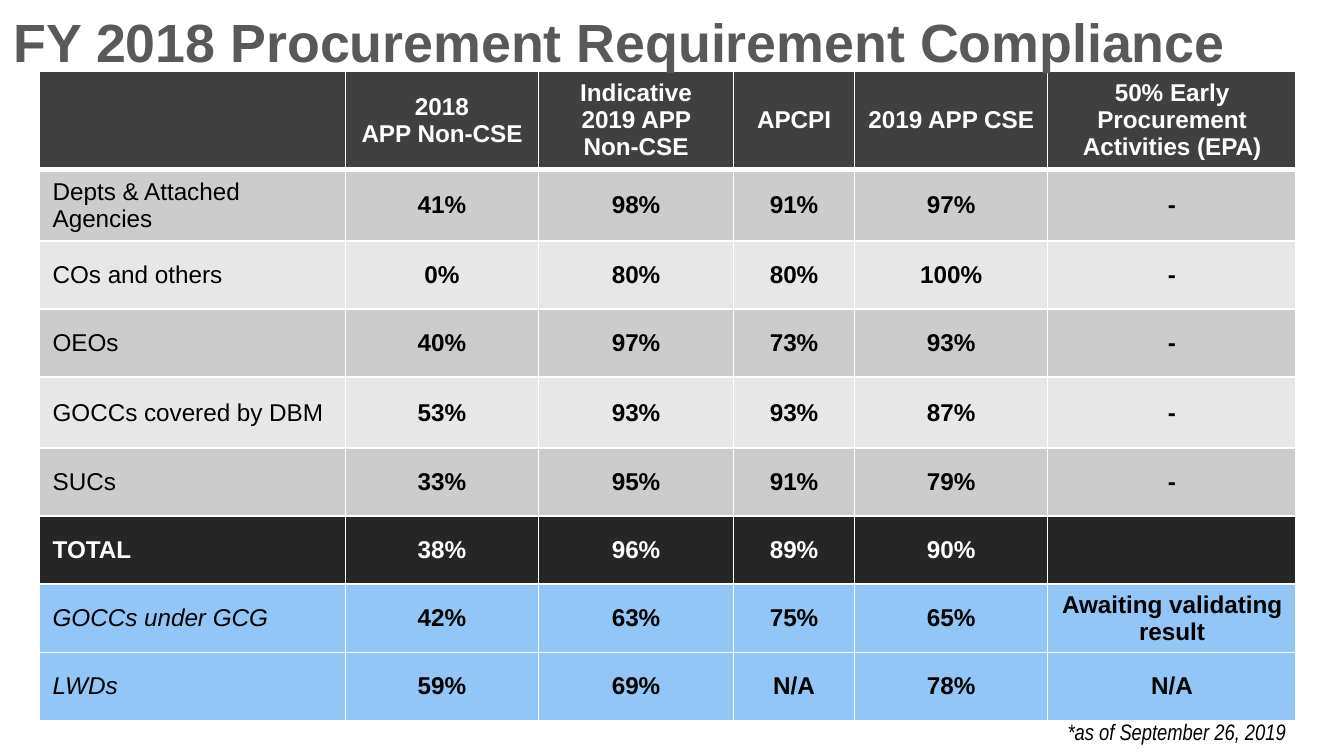
import pptx
import pptx.util
import pptx.dml.color
import pptx.enum.text
import pptx.oxml
import pptx.oxml.ns

Pt = pptx.util.Pt
RGB = pptx.dml.color.RGBColor
ALIGN = pptx.enum.text.PP_ALIGN
ANCHOR = pptx.enum.text.MSO_ANCHOR
FIT = pptx.enum.text.MSO_AUTO_SIZE

WHITE = RGB(0xFF, 0xFF, 0xFF)
BLACK = RGB(0x00, 0x00, 0x00)
GRAY = RGB(0x59, 0x59, 0x59)
HEAD = RGB(0x40, 0x40, 0x40)
DARK = RGB(0xCC, 0xCC, 0xCC)
LIGHT = RGB(0xE7, 0xE7, 0xE7)
TOTAL = RGB(0x26, 0x26, 0x26)
BLUE = RGB(0x91, 0xC6, 0xF7)

COLS = [164, 103.5, 104.5, 64.8, 103.5, 133.2]
TOPS = [52.5, 38.4] + [36.5] * 2 + [38] + [36.5] * 4
ROWS = [
    (HEAD, WHITE, ["", "2018\nAPP Non-CSE", "Indicative 2019 APP Non-CSE",
                   "APCPI", "2019 APP CSE", "50% Early Procurement Activities (EPA)"]),
    (DARK, BLACK, ["Depts & Attached Agencies", "41%", "98%", "91%", "97%", "-"]),
    (LIGHT, BLACK, ["COs and others", "0%", "80%", "80%", "100%", "-"]),
    (DARK, BLACK, ["OEOs", "40%", "97%", "73%", "93%", "-"]),
    (LIGHT, BLACK, ["GOCCs covered by DBM", "53%", "93%", "93%", "87%", "-"]),
    (DARK, BLACK, ["SUCs", "33%", "95%", "91%", "79%", "-"]),
    (TOTAL, WHITE, ["TOTAL", "38%", "96%", "89%", "90%", ""]),
    (BLUE, BLACK, ["GOCCs under GCG", "42%", "63%", "75%", "65%",
                   "Awaiting validating result"]),
    (BLUE, BLACK, ["LWDs", "59%", "69%", "N/A", "78%", "N/A"]),
]


def write(frame, text, size, color, align, font="Arial", bold=False, slant=False):
    for n, line in enumerate(text.split("\n")):
        para = frame.add_paragraph() if n else frame.paragraphs[0]
        para.alignment = align
        run = para.add_run()
        run.text = line
        run.font.name = font
        run.font.size = Pt(size)
        run.font.bold = bold
        run.font.italic = slant
        run.font.color.rgb = color


def edge(cell, side, width):
    space = pptx.oxml.ns.nsdecls("a")
    line = pptx.oxml.parse_xml(
        f'<a:ln{side} {space} w="{Pt(width)}"><a:solidFill>'
        f'<a:srgbClr val="{WHITE}"/></a:solidFill></a:ln{side}>')
    cell._tc.get_or_add_tcPr().append(line)


def add_title(slide, left, top, width, height):
    title = slide.shapes.title
    title.left, title.top = Pt(left), Pt(top)
    title.width, title.height = Pt(width), Pt(height)
    frame = title.text_frame
    frame.word_wrap = True
    frame.auto_size = FIT.NONE
    frame.vertical_anchor = ANCHOR.MIDDLE
    write(frame, "FY 2018 Procurement Requirement Compliance",
          28.8, GRAY, ALIGN.LEFT, bold=True)
    slide.shapes.element.append(title.element)


def add_grid(slide, left, top, width, height):
    table = slide.shapes.add_table(
        len(ROWS), len(COLS), Pt(left), Pt(top), Pt(width), Pt(height)).table
    for col, size in zip(table.columns, COLS):
        col.width = Pt(size)
    for row, size in zip(table.rows, TOPS):
        row.height = Pt(size)
    for r, (fill, ink, texts) in enumerate(ROWS):
        for c, text in enumerate(texts):
            cell = table.cell(r, c)
            cell.vertical_anchor = ANCHOR.MIDDLE
            cell.margin_left = cell.margin_right = Pt(7.2)
            cell.margin_top = cell.margin_bottom = Pt(3 if c == 0 else 3.6)
            for side in "LRTB":
                thick = (r, side) in [(0, "B"), (1, "T")]
                edge(cell, side, 3 if thick else 1)
            cell.fill.solid()
            cell.fill.fore_color.rgb = fill
            if text:
                write(cell.text_frame, text, 13, ink,
                      ALIGN.CENTER if c else ALIGN.LEFT,
                      bold=c > 0 or fill == TOTAL,
                      slant=c == 0 and fill == BLUE)


def add_note(slide, left, top, width, height):
    box = slide.shapes.add_textbox(Pt(left), Pt(top), Pt(width), Pt(height))
    frame = box.text_frame
    frame.word_wrap = True
    frame.auto_size = FIT.SHAPE_TO_FIT_TEXT
    write(frame, "*as of September 26, 2019", 12, BLACK, ALIGN.RIGHT,
          font="Arial Narrow", slant=True)


def main():
    deck = pptx.Presentation()
    deck.slide_width, deck.slide_height = Pt(720), Pt(405)
    slide = deck.slides.add_slide(deck.slide_layouts[5])
    add_grid(slide, 21, 38.2, sum(COLS), sum(TOPS))
    add_title(slide, 0, -2, 720, 48)
    add_note(slide, 384, 381, 312, 21.6)
    deck.save("out.pptx")


if __name__ == "__main__":
    main()
